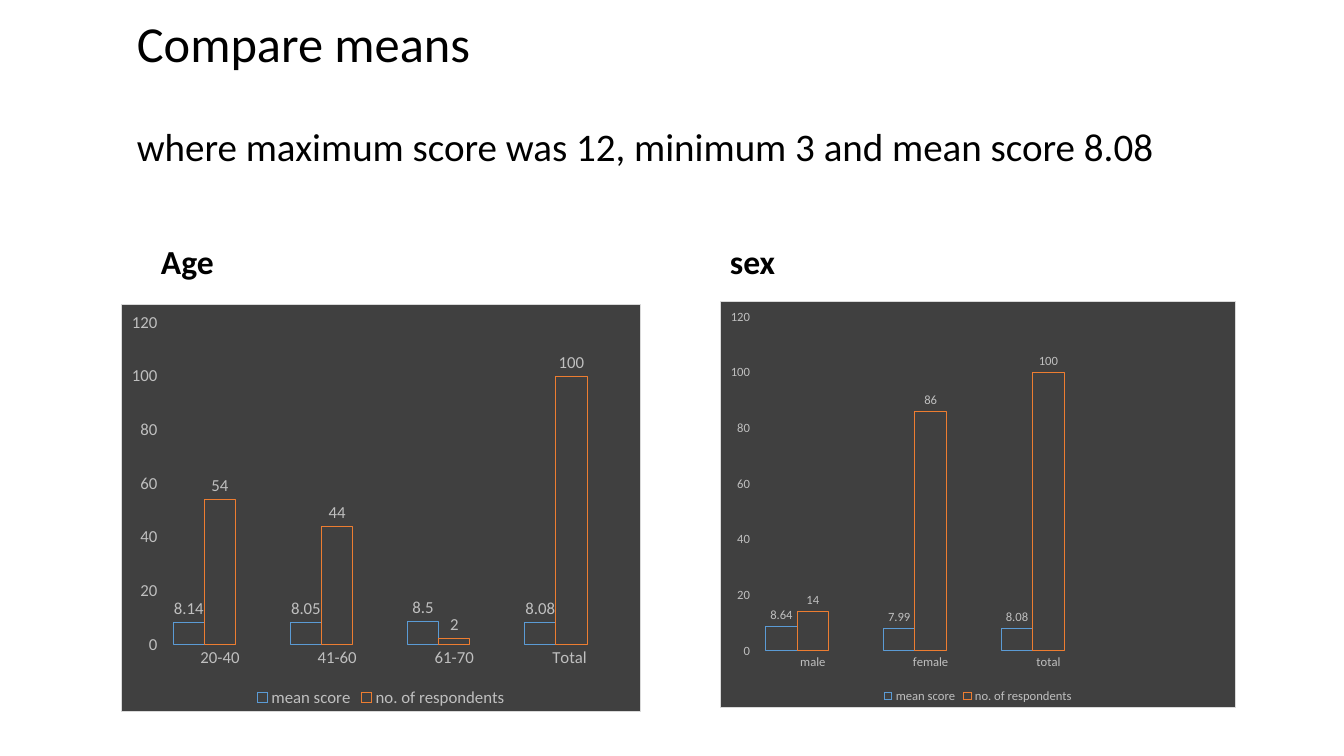
from lxml import etree
from pptx import Presentation
from pptx.chart.data import CategoryChartData
from pptx.dml.color import RGBColor
from pptx.enum.chart import XL_CHART_TYPE, XL_LABEL_POSITION, XL_LEGEND_POSITION, XL_TICK_MARK
from pptx.enum.text import MSO_ANCHOR
from pptx.oxml.ns import qn
from pptx.util import Emu, Pt

COLUMN = XL_CHART_TYPE.COLUMN_CLUSTERED
OUTSIDE = XL_LABEL_POSITION.OUTSIDE_END
BELOW = XL_LEGEND_POSITION.BOTTOM
NO_TICK = XL_TICK_MARK.NONE
MIDDLE, BOTTOM = MSO_ANCHOR.MIDDLE, MSO_ANCHOR.BOTTOM

FONT = "Calibri"
COLORS = {"text": "000000", "panel": "404040", "edge": "D9D9D9", "label": "BFBFBF"}
SERIES = [("mean score", "5B9BD5"), ("no. of respondents", "ED7D31"), ("Series 3", "A5A5A5")]

TITLE = [("Compare means", 36),
         ("where maximum score was 12, minimum 3 and mean score 8.08", 27.9)]
TITLE_BOX = (127, 37, 1058, 115)
PANELS = [
    {"head": "Age", "head_box": (151, 197, 490, 90), "box": (121, 304, 520, 408), "size": 12,
     "cats": ["20-40", "41-60", "61-70", "Total "],
     "vals": [[8.14, 8.05, 8.5, 8.08], [54, 44, 2, 100], [None] * 4]},
    {"head": "sex", "head_box": (720, 197, 490, 90), "box": (720, 301, 516, 407), "size": 9,
     "cats": ["male", "female", "total", ""],
     "vals": [[8.64, 7.99, 8.08, None], [14, 86, 100, None], [None] * 4]},
]


def px(*nums):
    return [Emu(round(n * 914400 / 100.8)) for n in nums]


def rgb(name):
    return RGBColor.from_string(COLORS.get(name, name))


def style(font, size, color, bold=False):
    for key, val in {"name": FONT, "size": Pt(size), "bold": bold}.items():
        setattr(font, key, val)
    font.color.rgb = rgb(color)


def add_text(slide, box, anchor):
    """Add a wrapped text box and return its first paragraph."""
    frame = slide.shapes.add_textbox(*px(*box)).text_frame
    frame.word_wrap = True
    frame.vertical_anchor = anchor
    para = frame.paragraphs[0]
    para.line_spacing = 0.9
    return para


def add_run(para, text, size, bold=False):
    run = para.add_run()
    run.text = text
    style(run.font, size, "text", bold)


def add_break(para, size):
    """Add a line break that is as tall as text of the given size."""
    para.add_line_break()
    last = para._p.findall(qn("a:br"))[-1]
    etree.SubElement(last, qn("a:rPr"), sz=str(size * 100))


def hide_entry(legend, index):
    entry = etree.Element(qn("c:legendEntry"))
    etree.SubElement(entry, qn("c:idx"), val=str(index))
    etree.SubElement(entry, qn("c:delete"), val="1")
    legend._element.find(qn("c:legendPos")).addnext(entry)


def fill_panel(chart):
    props = etree.Element(qn("c:spPr"))
    line = etree.Element(qn("a:ln"), w=str(Pt(0.75)))
    for parent, color in ((props, "panel"), (line, "edge")):
        solid = etree.SubElement(parent, qn("a:solidFill"))
        etree.SubElement(solid, qn("a:srgbClr"), val=COLORS[color])
    props.append(line)
    chart._chartSpace.find(qn("c:chart")).addnext(props)


def add_panel(slide, panel):
    size = panel["size"]
    data = CategoryChartData()
    data.categories = panel["cats"]
    for (name, _), vals in zip(SERIES, panel["vals"]):
        data.add_series(name, vals)
    chart = slide.shapes.add_chart(COLUMN, *px(*panel["box"]), data).chart
    style(chart.font, 10, "text")
    chart.has_title = False
    fill_panel(chart)

    chart.has_legend = True
    legend = chart.legend
    legend.position = BELOW
    legend.include_in_layout = False
    style(legend.font, size, "label")
    hide_entry(legend, 2)

    for axis in (chart.category_axis, chart.value_axis):
        axis.major_tick_mark = axis.minor_tick_mark = NO_TICK
        axis.has_major_gridlines = False
        axis.format.line.fill.background()
        style(axis.tick_labels.font, size, "label")
    scale = {"minimum_scale": 0, "maximum_scale": 120, "major_unit": 20}
    for key, val in scale.items():
        setattr(chart.value_axis, key, val)

    plot = chart.plots[0]
    plot.gap_width, plot.overlap, plot.vary_by_categories = 75, 0, False
    for series, (_, color) in zip(plot.series, SERIES):
        series.format.fill.background()
        series.format.line.color.rgb = rgb(color)
        series.format.line.width = Pt(0.75)
        labels = series.data_labels
        labels.show_value = True
        labels.position = OUTSIDE
        style(labels.font, size, "label")


def main():
    deck = Presentation()
    deck.slide_width, deck.slide_height = px(1344, 756)
    slide = deck.slides.add_slide(deck.slide_layouts[6])

    para = add_text(slide, TITLE_BOX, MIDDLE)
    (top, big), (sub, small) = TITLE
    add_run(para, top, big)
    for _ in range(2):
        add_break(para, big)
    add_run(para, sub, small)

    for panel in PANELS:
        para = add_text(slide, panel["head_box"], BOTTOM)
        para.space_before = Pt(10)
        add_run(para, panel["head"], 24, True)
        add_panel(slide, panel)
    deck.save("out.pptx")


if __name__ == "__main__":
    main()
